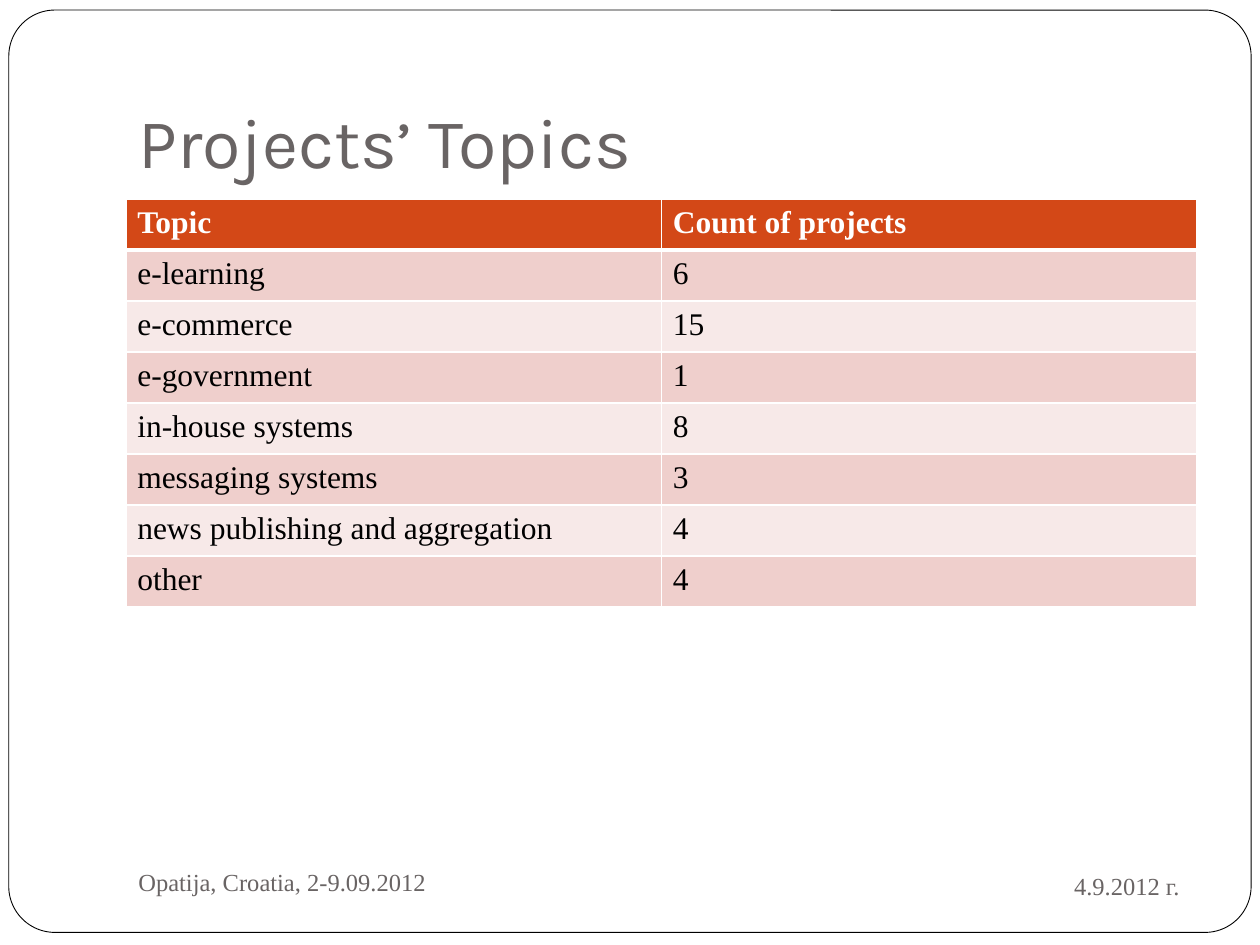
import pptx
import pptx.util
from lxml import etree
from pptx.dml.color import RGBColor
from pptx.enum.shapes import MSO_SHAPE
from pptx.enum.text import MSO_ANCHOR, PP_ALIGN
from pptx.oxml.ns import qn
from pptx.util import Inches


class Theme:
    white = RGBColor.from_string("FFFFFF")
    black = RGBColor.from_string("000000")
    gray = RGBColor.from_string("696464")
    header = RGBColor.from_string("D34817")
    bands = [RGBColor.from_string("EFCFCC"), RGBColor.from_string("F7E9E8")]
    heading_font = "Karla"
    body_font = "Times New Roman"
    title_size = pptx.util.Pt(40)
    table_size = pptx.util.Pt(18)
    footer_size = pptx.util.Pt(14)


def add_span(para, text, font, size, color, bold=False):
    span = para.add_run()
    span.text = text
    span.font.name = font
    span.font.size = size
    span.font.bold = bold
    span.font.color.rgb = color


def add_border(cell, side, points, position):
    """Draw one solid edge; edges must come before the fill in the cell."""
    line = etree.Element(qn(f"a:ln{side}"), w=str(pptx.util.Pt(points)))
    fill = etree.SubElement(line, qn("a:solidFill"))
    etree.SubElement(fill, qn("a:srgbClr"), val=str(Theme.white))
    cell._tc.get_or_add_tcPr().insert(position, line)


deck = pptx.Presentation()
deck.slide_width, deck.slide_height = Inches(10), Inches(7.5)
page = deck.slides.add_slide(deck.slide_layouts[6])

# Rounded page frame
frame = page.shapes.add_shape(
    MSO_SHAPE.ROUNDED_RECTANGLE, Inches(0.07), Inches(0.08), Inches(9.86), Inches(7.32))
frame.adjustments[0] = 0.05
frame.shadow.inherit = False
frame.fill.solid()
frame.fill.fore_color.rgb = Theme.white
frame.line.color.rgb = Theme.black
frame.line.width = pptx.util.Pt(0.5)

# Title and footers
captions = [
    ("Projects’ Topics", (1, 0.3, 8.5, 1.25), Theme.heading_font, Theme.title_size,
     MSO_ANCHOR.BOTTOM, PP_ALIGN.LEFT, 0.1),
    ("4.9.2012 г.", (6.75, 6.77, 2.71, 0.52), Theme.body_font, Theme.footer_size,
     MSO_ANCHOR.MIDDLE, PP_ALIGN.RIGHT, 0.05),
    ("Opatija, Croatia, 2-9.09.2012", (1, 6.75, 4.33, 0.5), Theme.body_font,
     Theme.footer_size, MSO_ANCHOR.MIDDLE, PP_ALIGN.LEFT, 0.05),
]
for text, place, font, size, anchor, align, bottom in captions:
    box = page.shapes.add_textbox(*map(Inches, place)).text_frame
    box.word_wrap = True
    box.vertical_anchor = anchor
    box.margin_bottom = Inches(bottom)
    para = box.paragraphs[0]
    para.alignment = align
    add_span(para, text, font, size, Theme.gray)

# Topics table
topics = [
    ("Topic", "Count of projects"),
    ("e-learning", "6"),
    ("e-commerce", "15"),
    ("e-government", "1"),
    ("in-house systems", "8"),
    ("messaging systems", "3"),
    ("news publishing and aggregation", "4"),
    ("other", "4"),
]
table = page.shapes.add_table(
    len(topics), 2, Inches(1), Inches(1.58), Inches(8.5), Inches(3.24)).table
for row, values in enumerate(topics):
    is_header = row == 0
    for column, value in enumerate(values):
        cell = table.cell(row, column)
        cell.margin_left = cell.margin_right = Inches(0.09)
        cell.fill.solid()
        cell.fill.fore_color.rgb = Theme.header if is_header else Theme.bands[(row - 1) % 2]
        add_span(cell.text_frame.paragraphs[0], value, Theme.body_font, Theme.table_size,
                 Theme.white if is_header else Theme.black, is_header)
        widths = {"L": 1, "R": 1, "T": 3 if row == 1 else 1, "B": 3 if is_header else 1}
        for position, (side, points) in enumerate(widths.items()):
            add_border(cell, side, points, position)

deck.save("out.pptx")
